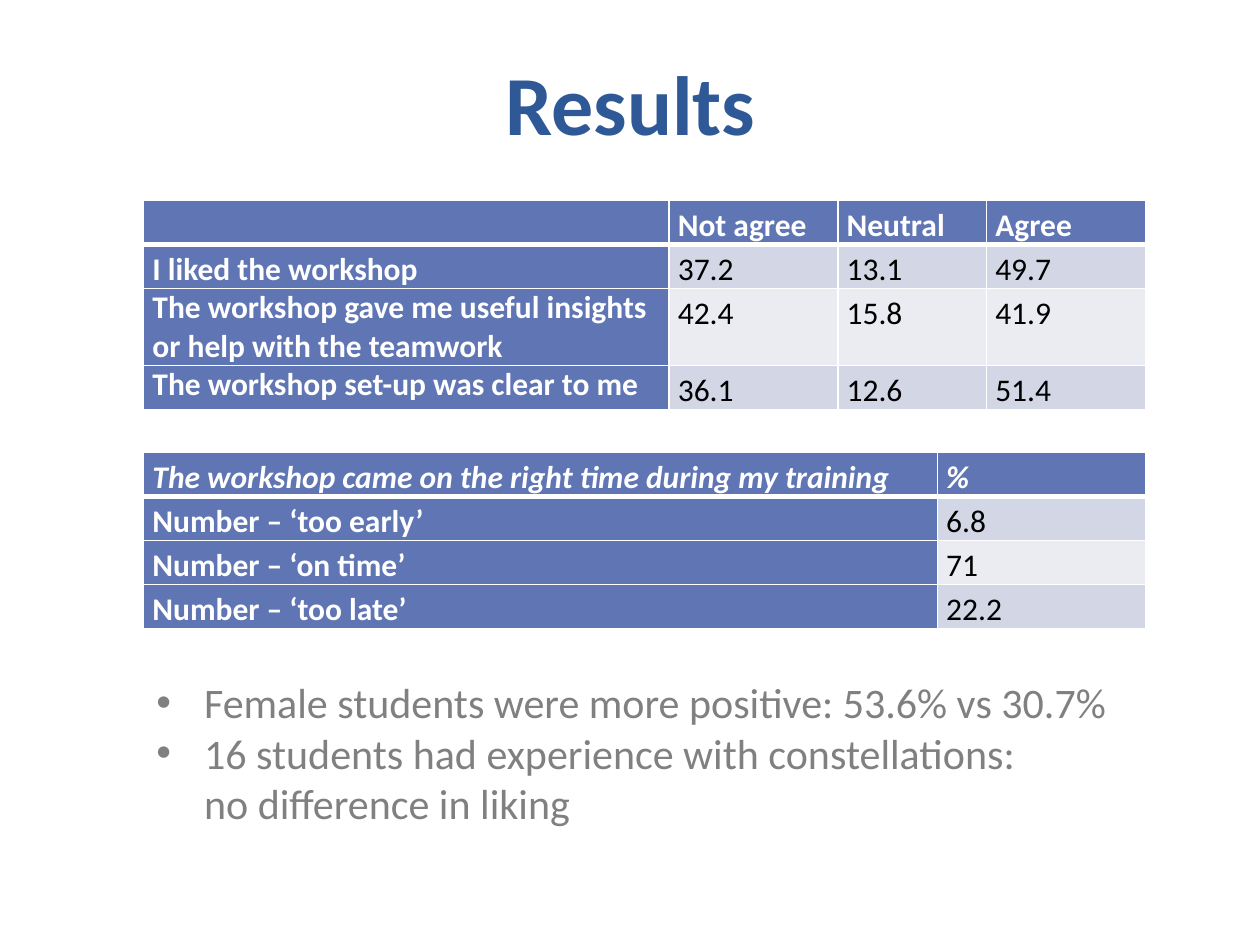
from lxml.etree import SubElement as Sub
from pptx import Presentation
from pptx.dml.color import RGBColor
from pptx.enum.text import MSO_ANCHOR as Anchor, MSO_AUTO_SIZE as Fit, PP_ALIGN as Align
from pptx.oxml.ns import qn
from pptx.util import Inches, Pt

FONT = "Calibri"
WHITE = "FFFFFF"
BLUE = "6076B4"
BANDS = ["EAECF2", "D2D6E5"]
LEFT = 1.14
ROW = 0.35

VIEWS = [
    ["", "Not agree", "Neutral", "Agree"],
    ["I liked the workshop", "37.2", "13.1", "49.7"],
    ["The workshop gave me useful insights or help with the teamwork", "42.4", "15.8", "41.9"],
    ["The workshop set-up was clear to me", "36.1", "12.6", "51.4"],
]
TIMING = [
    ["The workshop came on the right time during my training", "%"],
    ["Number – ‘too early’", "6.8"],
    ["Number – ‘on time’", "71"],
    ["Number – ‘too late’", "22.2"],
]
POINTS = [
    ["Female students were more positive: 53.6% vs 30.7%"],
    ["16 students had experience with constellations: ", "no difference in liking"],
]


def paint(color):
    """Turn a hex string into a colour."""
    return RGBColor.from_string(color)


def add_run(para, text, size, color, bold=False, italic=False):
    """Add one formatted run to a paragraph."""
    run = para.add_run()
    run.text = text
    font = run.font
    font.name, font.size, font.bold, font.italic = FONT, Pt(size), bold, italic
    font.color.rgb = paint(color)


def place(shape, left, top, width, height):
    """Move and size a shape, in inches."""
    shape.left, shape.top = Inches(left), Inches(top)
    shape.width, shape.height = Inches(width), Inches(height)


def add_title(slide, text):
    """Fill the title placeholder."""
    title = slide.shapes.title
    place(title, 0.28, 0.05, 9.45, 1.52)
    frame = title.text_frame
    frame.auto_size = Fit.NONE
    frame.vertical_anchor = Anchor.MIDDLE
    para = frame.paragraphs[0]
    para.alignment = Align.CENTER
    para.line_spacing = Pt(58)
    add_run(para, text, 48, "2F5897", bold=True)


def edge(cell, sides):
    """Draw white cell borders from a map of side to width in points."""
    props = cell._tc.get_or_add_tcPr()
    for side, width in sides.items():
        line = Sub(props, qn(f"a:ln{side}"), w=str(Pt(width)))
        fill = Sub(line, qn("a:solidFill"))
        Sub(fill, qn("a:srgbClr"), val=WHITE)


def fill_cell(cell, text, head, side, band, tight, italic):
    """Format one table cell and write its text."""
    cell.margin_left = cell.margin_right = Inches(0.07)
    cell.margin_top = cell.margin_bottom = 0
    edge(cell, {"L": 1, "R": 1, "T": 1 if head else band[1], "B": 3 if head else 1})
    label = head or side
    cell.fill.solid()
    cell.fill.fore_color.rgb = paint(BLUE if label else band[0])
    para = cell.text_frame.paragraphs[0]
    para.line_spacing = 1.0 if tight else 1.15
    if text:
        add_run(para, text, 18, WHITE if label else "000000", label, italic and head)


def add_grid(slide, top, data, widths, heights, tight=(), italic=False):
    """Add a table with a header row, a label column and banded values."""
    shape = slide.shapes.add_table(
        len(data), len(widths), Inches(LEFT), Inches(top),
        Inches(sum(widths)), Inches(sum(heights)))
    table = shape.table
    for col, width in zip(table.columns, widths):
        col.width = Inches(width)
    for r, (row, height) in enumerate(zip(data, heights)):
        table.rows[r].height = Inches(height)
        band = BANDS[r % 2], 3 if r == 1 else 1
        for c, text in enumerate(row):
            fill_cell(table.cell(r, c), text, r == 0, c == 0, band,
                      c == 0 and r in tight, italic)


def add_list(slide, items):
    """Fill the body placeholder with bulleted items."""
    body = slide.placeholders[1]
    place(body, LEFT, 5.32, 8.03, 1.31)
    frame = body.text_frame
    frame.auto_size = Fit.SHAPE_TO_FIT_TEXT
    frame.vertical_anchor = Anchor.TOP
    for i, lines in enumerate(items):
        para = frame.add_paragraph() if i else frame.paragraphs[0]
        para.space_before = Pt(0)
        props = para._p.get_or_add_pPr()
        props.set("marL", str(Inches(0.38)))
        props.set("indent", str(Inches(-0.38)))
        Sub(props, qn("a:buFont"), typeface="Arial")
        Sub(props, qn("a:buChar"), char="•")
        for n, line in enumerate(lines):
            if n:
                para.add_line_break()
            add_run(para, line, 24, "808080")


def main():
    """Build the results slide."""
    deck = Presentation()
    deck.slide_width, deck.slide_height = Inches(10), Inches(7.5)
    slide = deck.slides.add_slide(deck.slide_layouts[1])
    add_title(slide, "Results")
    add_grid(slide, 1.59, VIEWS, [4.17, 1.34, 1.18, 1.26],
             [ROW, ROW, 0.61, ROW], tight=(2, 3))
    add_grid(slide, 3.59, TIMING, [6.3, 1.65], [ROW] * 4, italic=True)
    add_list(slide, POINTS)
    deck.save("out.pptx")


if __name__ == "__main__":
    main()
